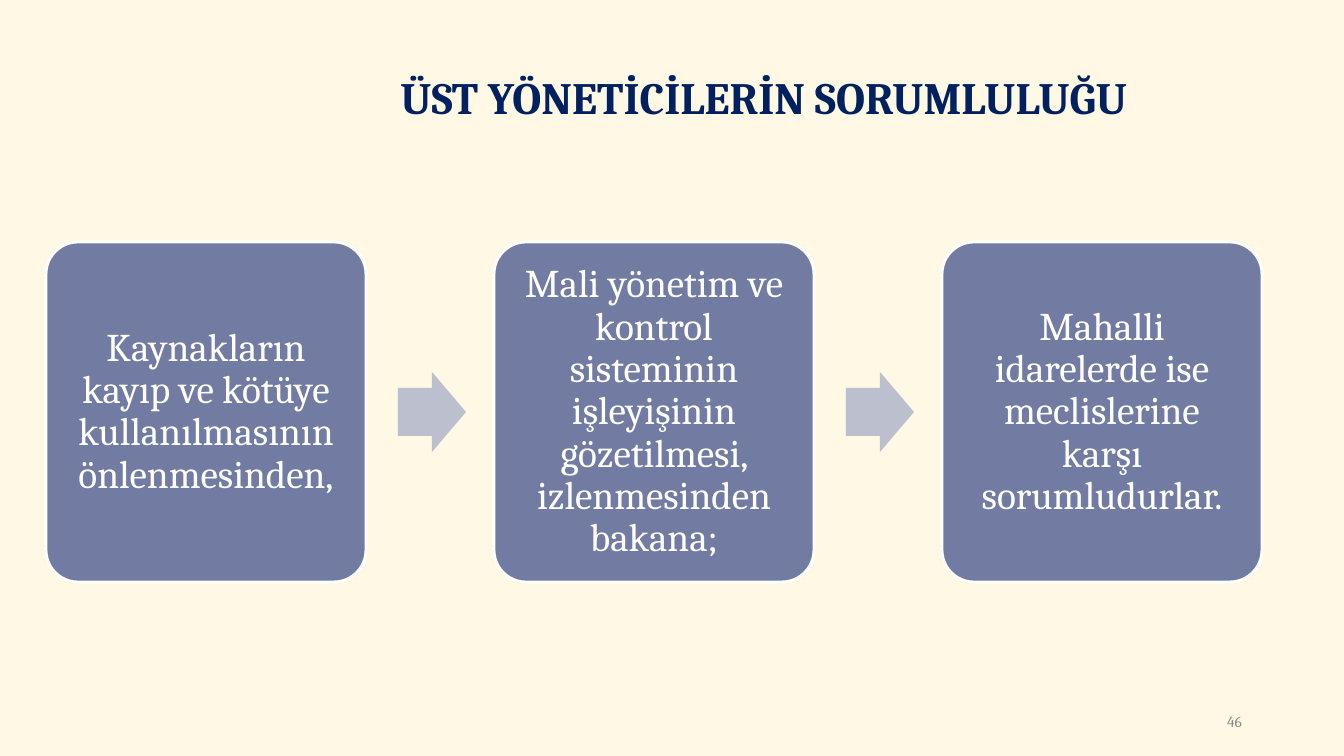
from pptx import Presentation
from pptx import util as u
from pptx.dml.color import RGBColor
from pptx.enum import shapes, text

PX = 914400 / 100.8
COLORS = {
    "background": "FEF8E4",
    "title": "002060",
    "step": "727CA3",
    "arrow": "BCBFCE",
    "white": "FFFFFF",
    "number": "8C8C8C",
}
STEPS = [
    "Kaynakların kayıp ve kötüye kullanılmasının önlenmesinden,",
    "Mali yönetim ve kontrol sisteminin işleyişinin gözetilmesi, izlenmesinden bakana;",
    "Mahalli idarelerde ise meclislerine karşı sorumludurlar.",
]
STEP_LEFT, STEP_TOP, STEP_WIDTH, STEP_HEIGHT = 46, 242, 320, 340
STEP_PITCH = 448
ARROW_WIDTH, ARROW_HEIGHT, ARROW_GAP = 68, 80, 32


def px(*lengths):
    return [u.Emu(round(length * PX)) for length in lengths]


def write(shape, content, size, color, align, bold=False, spacing=1.0):
    frame = shape.text_frame
    frame.text = content
    frame.word_wrap = True
    frame.vertical_anchor = text.MSO_ANCHOR.MIDDLE
    paragraph = frame.paragraphs[0]
    paragraph.alignment = align
    paragraph.line_spacing = spacing
    font = paragraph.runs[0].font
    font.name = "Cambria"
    font.size = u.Pt(size)
    font.bold = bold
    font.color.rgb = RGBColor.from_string(COLORS[color])


presentation = Presentation()
presentation.slide_width, presentation.slide_height = px(1344, 756)
slide = presentation.slides.add_slide(presentation.slide_layouts[6])
slide.background.fill.solid()
slide.background.fill.fore_color.rgb = RGBColor.from_string(COLORS["background"])

title = slide.shapes.add_textbox(*px(184, 27, 1160, 146))
write(title, "ÜST YÖNETİCİLERİN SORUMLULUĞU", 32, "title",
      text.PP_ALIGN.CENTER, bold=True, spacing=0.9)

for index, content in enumerate(STEPS):
    left = STEP_LEFT + index * STEP_PITCH
    step = slide.shapes.add_shape(
        shapes.MSO_SHAPE.ROUNDED_RECTANGLE,
        *px(left, STEP_TOP, STEP_WIDTH, STEP_HEIGHT))
    step.adjustments[0] = 0.1
    step.shadow.inherit = False
    step.fill.solid()
    step.fill.fore_color.rgb = RGBColor.from_string(COLORS["step"])
    step.line.color.rgb = RGBColor.from_string(COLORS["white"])
    step.line.width = u.Pt(2)
    write(step, content, 28, "white", text.PP_ALIGN.CENTER, spacing=0.9)
    frame = step.text_frame
    (frame.margin_left, frame.margin_top,
     frame.margin_right, frame.margin_bottom) = px(12, 12, 12, 12)

    if index < len(STEPS) - 1:
        arrow = slide.shapes.add_shape(
            shapes.MSO_SHAPE.RIGHT_ARROW,
            *px(left + STEP_WIDTH + ARROW_GAP,
                STEP_TOP + (STEP_HEIGHT - ARROW_HEIGHT) / 2,
                ARROW_WIDTH, ARROW_HEIGHT))
        arrow.adjustments[0] = 0.6
        arrow.adjustments[1] = 0.5
        arrow.shadow.inherit = False
        arrow.fill.solid()
        arrow.fill.fore_color.rgb = RGBColor.from_string(COLORS["arrow"])
        arrow.line.fill.background()

number = slide.shapes.add_textbox(*px(950, 701, 302, 40))
write(number, "46", 11, "number", text.PP_ALIGN.RIGHT)

presentation.save("out.pptx")
